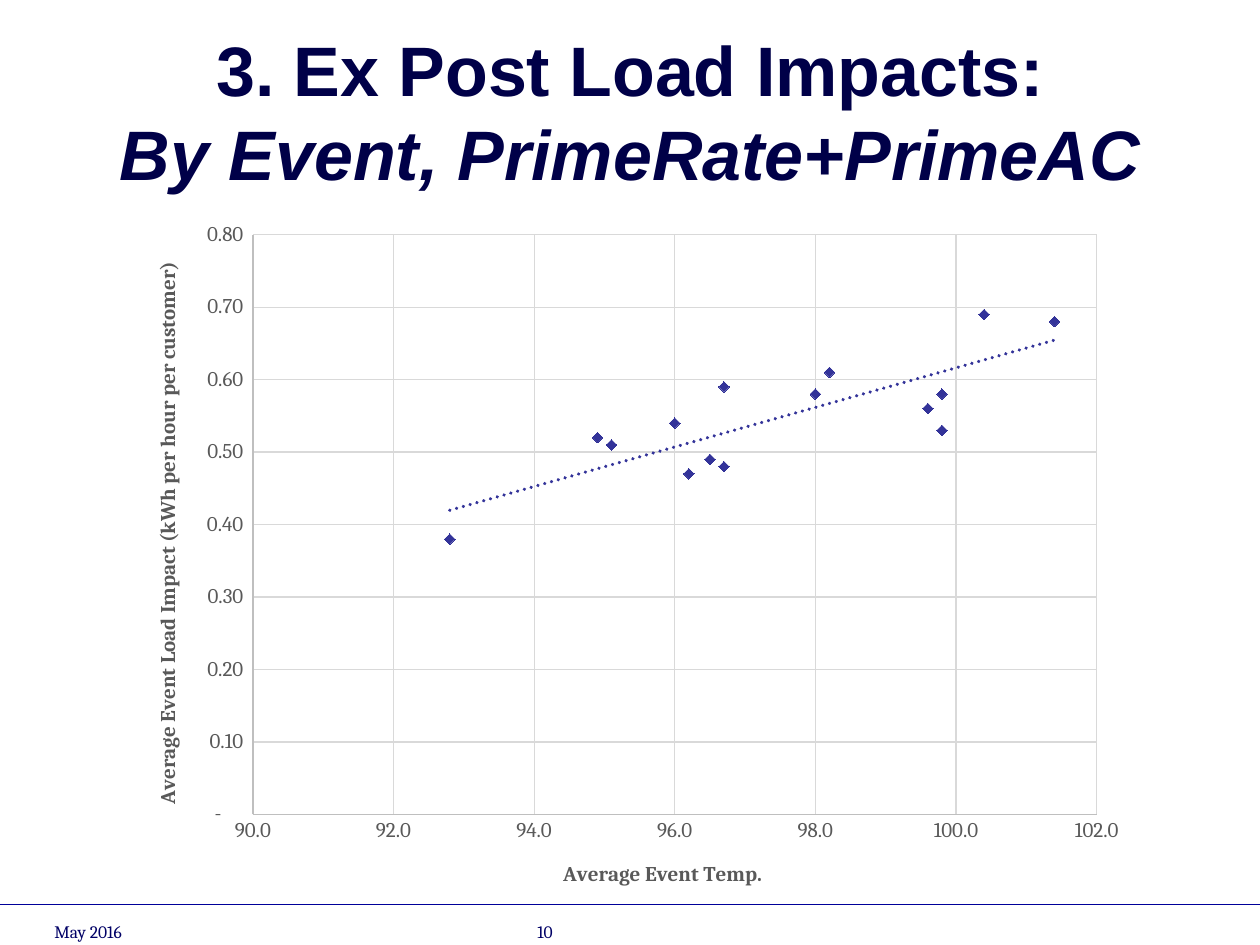
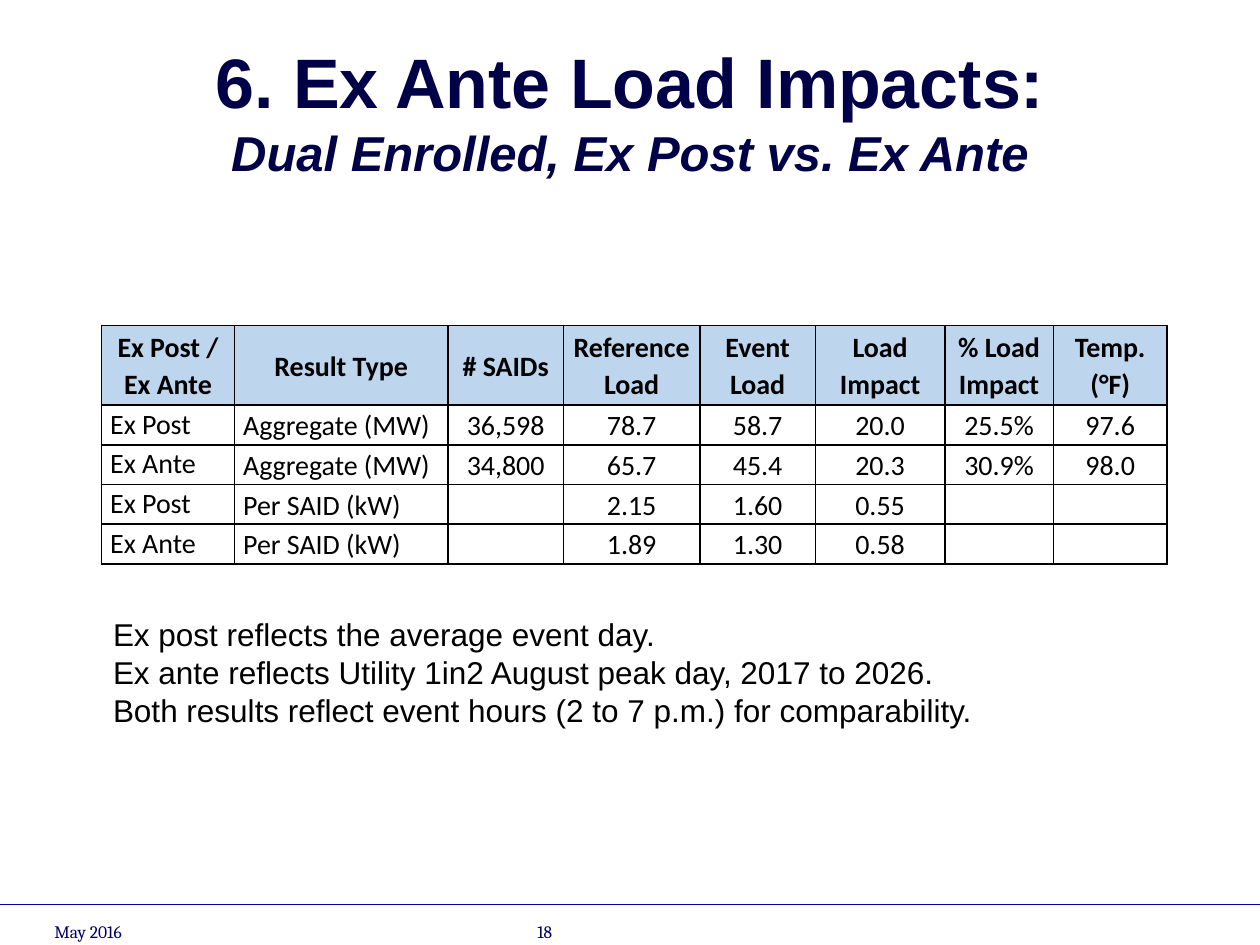
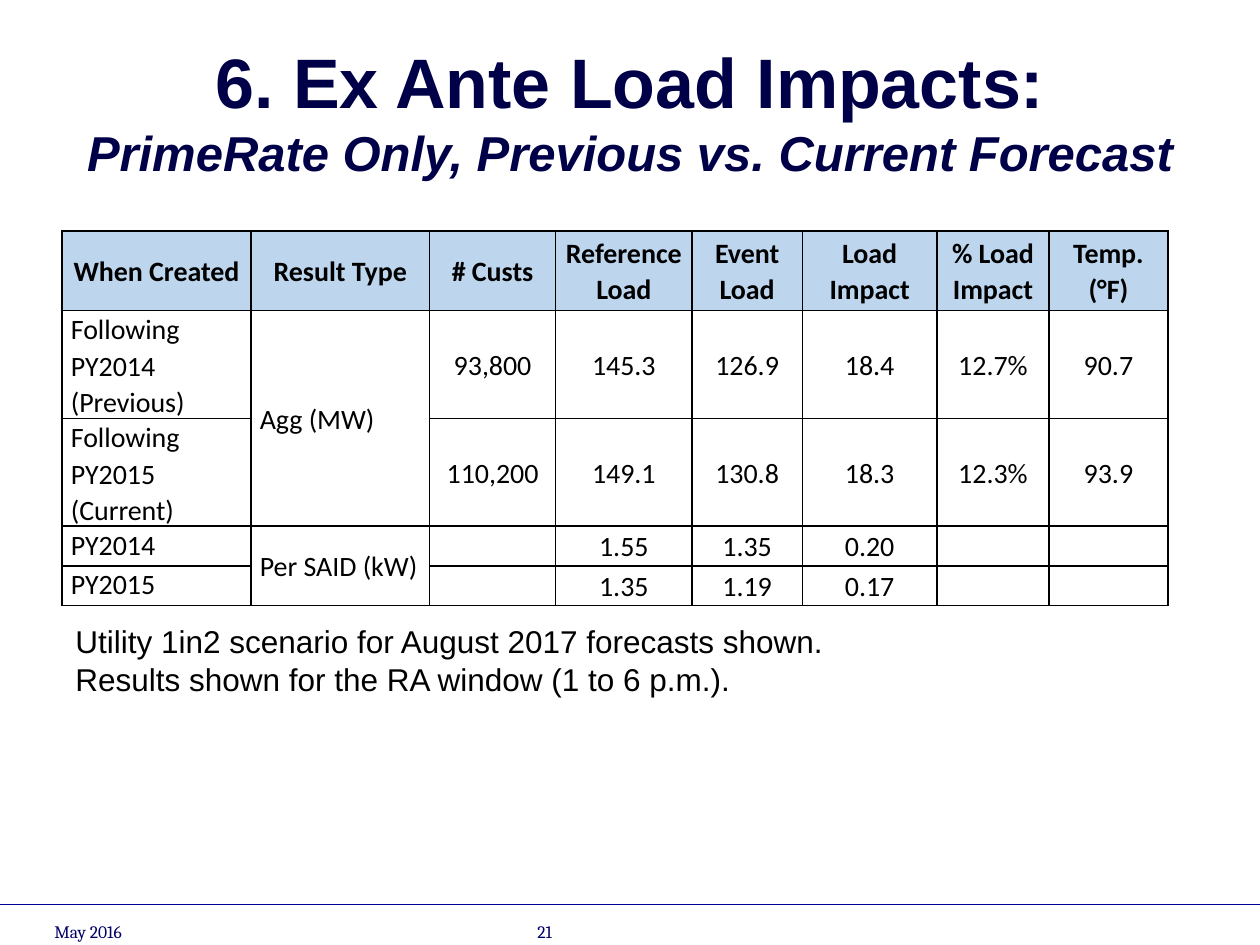
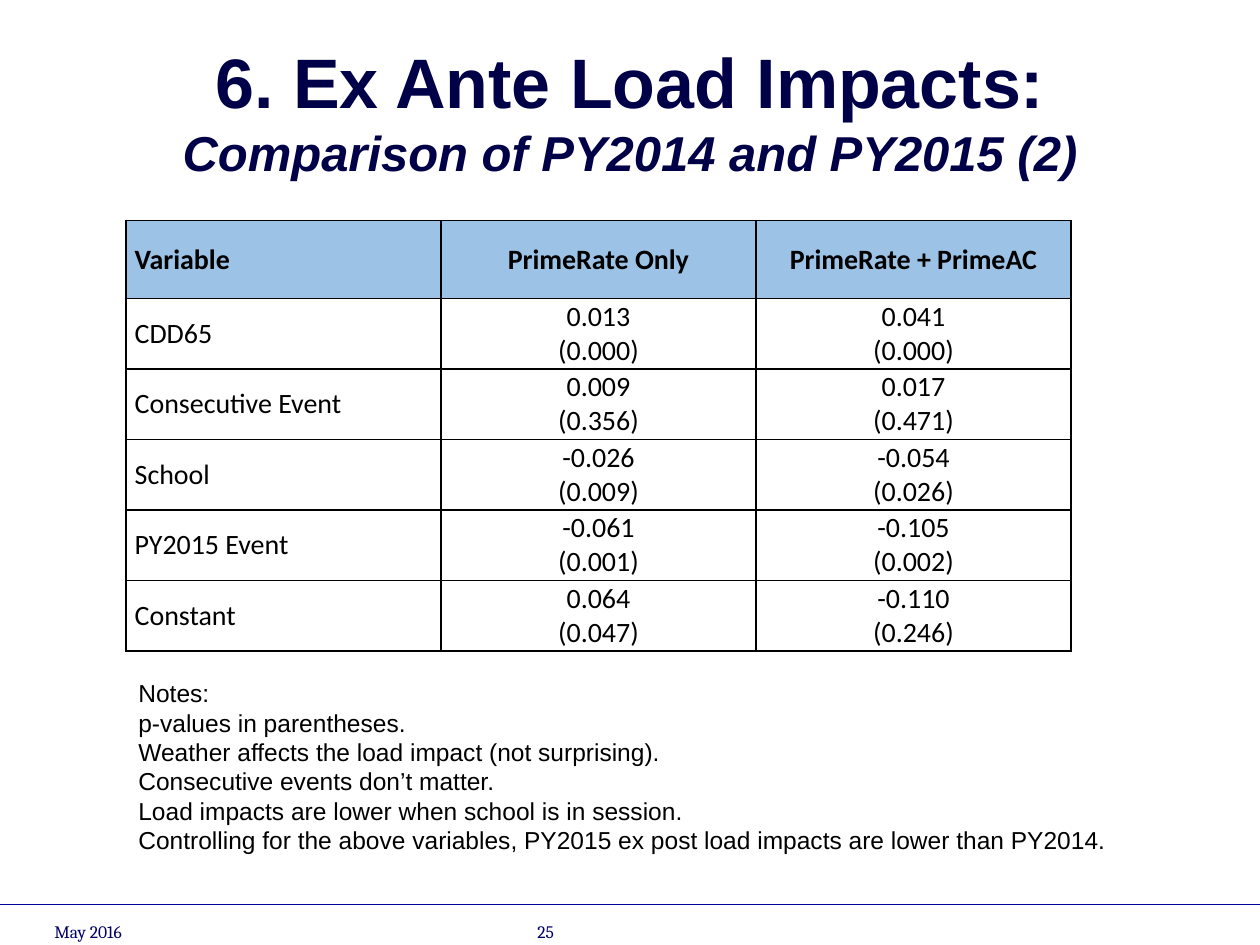
from pptx import Presentation
from pptx.chart.data import XyChartData
from pptx.dml.color import RGBColor
from pptx.enum.chart import XL_CHART_TYPE, XL_MARKER_STYLE, XL_TICK_MARK
from pptx.enum.shapes import MSO_CONNECTOR
from pptx.enum.text import MSO_ANCHOR, MSO_AUTO_SIZE, PP_ALIGN
from pptx.oxml import parse_xml
from pptx.oxml.ns import nsdecls
from pptx.util import Pt

NAVY = "000048"
FOOT = "000066"
RULE = "000099"
BLACK = "000000"
GRAY = "595959"
AXIS = "BFBFBF"
GRID = "D9D9D9"
MARK = "333399"
PALE = "BDD6EE"
BLUE = "9CC2E5"
WIDE, HIGH = 720, 540
LEFT, MID = PP_ALIGN.LEFT, PP_ALIGN.CENTER

LOADS = ["Reference Load", "Event Load", "Load Impact", "% Load Impact", "Temp. (°F)"]

POINTS = [
    (96.0, 0.54), (98.2, 0.61), (96.7, 0.59), (101.4, 0.68), (95.1, 0.51),
    (98.0, 0.58), (100.4, 0.69), (94.9, 0.52), (99.8, 0.58), (92.8, 0.38),
    (96.7, 0.48), (96.5, 0.49), (99.8, 0.53), (99.6, 0.56), (96.2, 0.47),
]

DUAL = [
    ["Ex Post / Ex Ante", "Result Type", "# SAIDs"] + LOADS,
    ["Ex Post", "Aggregate (MW)", "36,598", "78.7", "58.7", "20.0", "25.5%", "97.6"],
    ["Ex Ante", "Aggregate (MW)", "34,800", "65.7", "45.4", "20.3", "30.9%", "98.0"],
    ["Ex Post", "Per SAID (kW)", "", "2.15", "1.60", "0.55", "", ""],
    ["Ex Ante", "Per SAID (kW)", "", "1.89", "1.30", "0.58", "", ""],
]

PAST = [
    ["When Created", "Result Type", "# Custs"] + LOADS,
    ["Following PY2014 (Previous)", "Agg (MW)", "93,800", "145.3", "126.9", "18.4", "12.7%", "90.7"],
    ["Following PY2015 (Current)", "", "110,200", "149.1", "130.8", "18.3", "12.3%", "93.9"],
    ["PY2014", "Per SAID (kW)", "", "1.55", "1.35", "0.20", "", ""],
    ["PY2015", "", "", "1.35", "1.19", "0.17", "", ""],
]

MODEL = [
    ["Variable", "PrimeRate Only", "PrimeRate + PrimeAC"],
    ["CDD65", "0.013\n(0.000)", "0.041\n(0.000)"],
    ["Consecutive Event", "0.009\n(0.356)", "0.017\n(0.471)"],
    ["School", "-0.026\n(0.009)", "-0.054\n(0.026)"],
    ["PY2015 Event", "-0.061\n(0.001)", "-0.105\n(0.002)"],
    ["Constant", "0.064\n(0.047)", "-0.110\n(0.246)"],
]


def tint(code):
    return RGBColor.from_string(code)


def style(font, size, color, name, bold=False, slant=False):
    font.size = Pt(size)
    font.color.rgb = tint(color)
    font.name = name
    font.bold = bold
    font.italic = slant


def write(frame, text, size=18, color=BLACK, font="Arial", bold=False,
          slant=False, align=LEFT, space=None, more=False):
    for spot, line in enumerate(text.split("\n")):
        if more:
            par = frame.paragraphs[-1]
            par.add_line_break()
        else:
            par = frame.add_paragraph() if spot else frame.paragraphs[0]
        par.alignment = align
        if space:
            par.line_spacing = space
        run = par.add_run()
        run.text = line
        style(run.font, size, color, font, bold, slant)


def place(slide, box, anchor=MSO_ANCHOR.TOP):
    frame = slide.shapes.add_textbox(*map(Pt, box)).text_frame
    frame.word_wrap = True
    frame.vertical_anchor = anchor
    return frame


def footer(slide, page, top=505):
    line = slide.shapes.add_connector(
        MSO_CONNECTOR.STRAIGHT, 0, Pt(top + 12), Pt(WIDE), Pt(top + 12))
    line.line.color.rgb = tint(RULE)
    line.line.width = Pt(0.75)
    line._element.spPr.append(parse_xml(f"<a:effectLst {nsdecls('a')}/>"))
    for left, text in ((24, "May 2016"), (300, str(page))):
        frame = place(slide, (left, top, 168, 37), MSO_ANCHOR.BOTTOM)
        write(frame, text, size=10, color=FOOT, font="Cambria")


def title(slide, head, sub, size, box=(36, 18, 648, 90)):
    frame = place(slide, box, MSO_ANCHOR.MIDDLE)
    look = dict(color=NAVY, bold=True, align=MID)
    write(frame, head, size=40, **look)
    write(frame, sub, size=size, slant=True, more=True, **look)


def start(deck, page, head, sub, size=28):
    slide = deck.slides.add_slide(deck.slide_layouts[6])
    footer(slide, page)
    title(slide, head, sub, size)
    return slide


def notes(slide, box, text, size=18):
    frame = place(slide, box)
    frame.auto_size = MSO_AUTO_SIZE.SHAPE_TO_FIT_TEXT
    write(frame, text, size=size)


def border(cell):
    props = cell._tc.get_or_add_tcPr()
    for side in "LRTB":
        props.append(parse_xml(
            f'<a:ln{side} {nsdecls("a")} w="12700"><a:solidFill>'
            f'<a:srgbClr val="{BLACK}"/></a:solidFill></a:ln{side}>'))


def table(slide, spot, cols, rows, data, fill=PALE, lefts=(), tops=(),
          heads=(), joins=(), space=None):
    grid = slide.shapes.add_table(
        len(rows), len(cols), *map(Pt, (*spot, sum(cols), sum(rows)))).table
    grid.first_row = grid.horz_banding = False
    for col, width in zip(grid.columns, cols):
        col.width = Pt(width)
    for row, height in zip(grid.rows, rows):
        row.height = Pt(height)
    for first, last, col in joins:
        grid.cell(first, col).merge(grid.cell(last, col))
    for r, line in enumerate(data):
        for c, text in enumerate(line):
            cell = grid.cell(r, c)
            border(cell)
            cell.margin_left = cell.margin_right = Pt(5)
            cell.margin_top = cell.margin_bottom = 0
            top = r and c in tops
            cell.vertical_anchor = MSO_ANCHOR.TOP if top else MSO_ANCHOR.MIDDLE
            if r:
                cell.fill.background()
            else:
                cell.fill.solid()
                cell.fill.fore_color.rgb = tint(fill)
            if text:
                side = LEFT if c in (lefts if r else heads) else MID
                write(cell.text_frame, text, size=16, font="Calibri",
                      bold=not r, align=side, space=space)


def scale(axis, name, low, high, step, form):
    axis.minimum_scale, axis.maximum_scale = low, high
    axis.major_unit = step
    axis.major_tick_mark = axis.minor_tick_mark = XL_TICK_MARK.NONE
    axis.has_major_gridlines = True
    for line, color in ((axis.format.line, AXIS), (axis.major_gridlines.format.line, GRID)):
        line.color.rgb = tint(color)
        line.width = Pt(0.75)
    axis.tick_labels.number_format = form
    axis.tick_labels.number_format_is_linked = False
    style(axis.tick_labels.font, 12, GRAY, "Cambria")
    write(axis.axis_title.text_frame, name, size=12, color=GRAY,
          font="Cambria", bold=True, align=MID)


def trend(series):
    series._element.find("{*}xVal").addprevious(parse_xml(
        f'<c:trendline {nsdecls("c", "a")}><c:spPr><a:ln w="25400" cap="rnd">'
        f'<a:solidFill><a:srgbClr val="{MARK}"/></a:solidFill>'
        '<a:prstDash val="sysDot"/></a:ln></c:spPr>'
        '<c:trendlineType val="linear"/><c:dispRSqr val="0"/>'
        '<c:dispEq val="0"/></c:trendline>'))


def layout(chart, x, y, w, h):
    parts = "".join(f'<c:{key} val="{val}"/>' for key, val in zip("xywh", (x, y, w, h)))
    area = chart._chartSpace.chart.plotArea
    for old in area.findall("{*}layout"):
        area.remove(old)
    area.insert(0, parse_xml(
        f'<c:layout {nsdecls("c")}><c:manualLayout><c:layoutTarget val="inner"/>'
        f'<c:xMode val="edge"/><c:yMode val="edge"/>{parts}'
        '</c:manualLayout></c:layout>'))


def scatter(slide, box):
    data = XyChartData()
    group = data.add_series("Series 1")
    for x, y in POINTS:
        group.add_data_point(x, y)
    chart = slide.shapes.add_chart(
        XL_CHART_TYPE.XY_SCATTER, *map(Pt, box), data).chart
    chart.has_title = chart.has_legend = False
    style(chart.font, 10, BLACK, "Cambria")
    chart.plots[0].vary_by_categories = False
    scale(chart.category_axis, "Average Event Temp.", 90, 102, 2, "0.0")
    scale(chart.value_axis, "Average Event Load Impact (kWh per hour per customer)",
          0, 0.8, 0.1, '0.00_);(0.00);"-"??_)')
    body = chart.value_axis.axis_title.text_frame._txBody.bodyPr
    body.set("rot", "-5400000")
    body.set("vert", "horz")
    series = chart.plots[0].series[0]
    series.smooth = False
    series.format.line.fill.background()
    mark = series.marker
    mark.style = XL_MARKER_STYLE.DIAMOND
    mark.size = 6
    mark.format.fill.solid()
    mark.format.fill.fore_color.rgb = tint(MARK)
    mark.format.line.color.rgb = tint(MARK)
    trend(series)
    layout(chart, 0.13, 0.04, 0.83, 0.82)


def main():
    deck = Presentation()
    deck.slide_width, deck.slide_height = Pt(WIDE), Pt(HIGH)
    ante = "6. Ex Ante Load Impacts:"
    load = dict(lefts=(0, 1), tops=(0,), space=1.07)

    slide = start(deck, 10, "3. Ex Post Load Impacts:",
                  "By Event, PrimeRate+PrimeAC", 40)
    scatter(slide, (69, 118, 581, 404))

    slide = start(deck, 18, ante, "Dual Enrolled, Ex Post vs. Ex Ante")
    notes(slide, (57.5, 348, 624, 73),
          "Ex post reflects the average event day.\n"
          "Ex ante reflects Utility 1in2 August peak day, 2017 to 2026.\n"
          "Both results reflect event hours (2 to 7 p.m.) for comparability.")
    table(slide, (58, 186), (76, 122, 66, 78, 66, 74, 62, 65),
          [45.5] + [22.7] * 4, DUAL, **load)

    slide = start(deck, 21, ante, "PrimeRate Only, Previous vs. Current Forecast")
    notes(slide, (36, 352, 624, 51),
          "Utility 1in2 scenario for August 2017 forecasts shown.\n"
          "Results shown for the RA window (1 to 6 p.m.).")
    table(slide, (35.5, 132), (108, 102, 72, 78, 63, 77, 64, 68),
          (45.5, 61.5, 61.5, 22.7, 22.7), PAST,
          joins=((1, 2, 1), (3, 4, 1)), **load)

    slide = start(deck, 25, ante, "Comparison of PY2014 and PY2015 (2)")
    table(slide, (72, 126), [180] * 3, [44.5] + [40.3] * 5, MODEL,
          fill=BLUE, lefts=(0,), heads=(0,))
    notes(slide, (72, 384, 576, 109),
          "Notes:\n"
          "p-values in parentheses.\n"
          "Weather affects the load impact (not surprising).\n"
          "Consecutive events don’t matter.\n"
          "Load impacts are lower when school is in session.\n"
          "Controlling for the above variables, PY2015 ex post load impacts "
          "are lower than PY2014.", size=14)

    deck.save("out.pptx")


if __name__ == "__main__":
    main()
